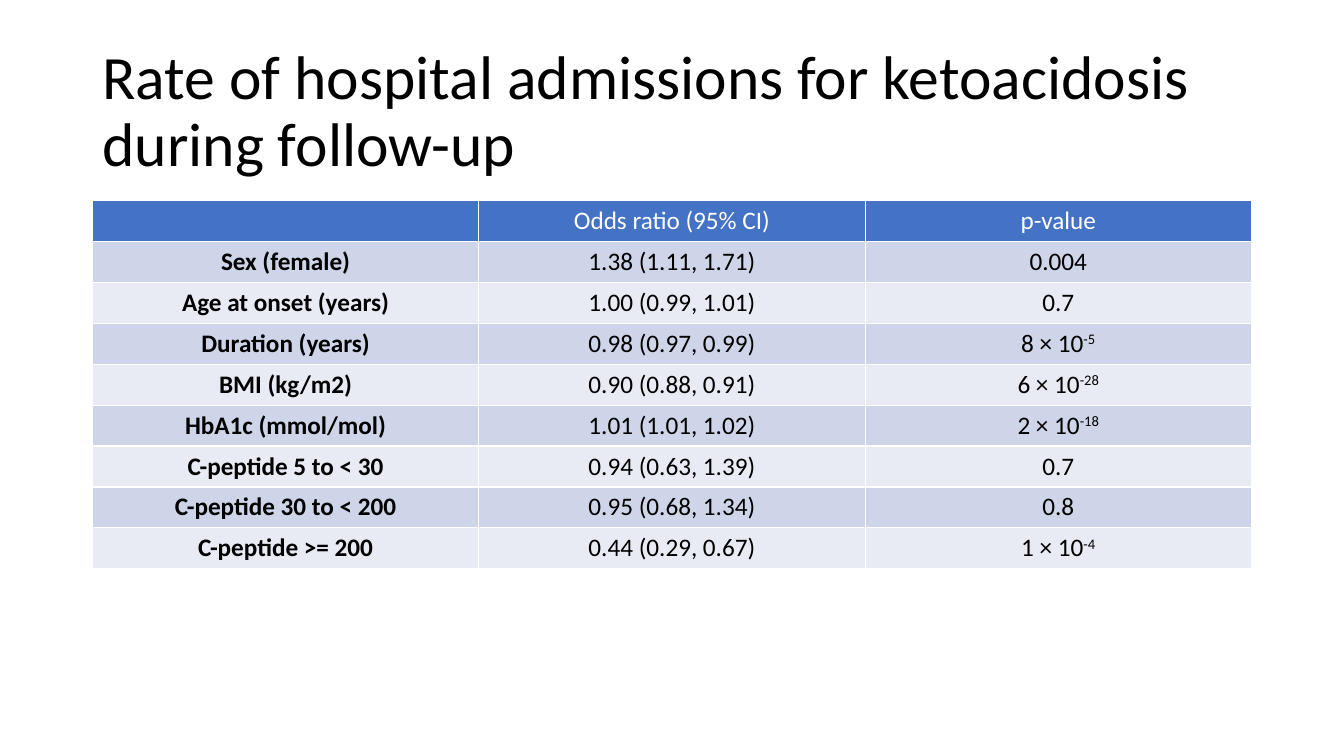
"""Build a slide with a table of odds ratios for ketoacidosis admissions."""
import dataclasses

import lxml.etree
import pptx
import pptx.dml.color
import pptx.enum.text
import pptx.oxml.ns
import pptx.util

Cm = pptx.util.Cm
Pt = pptx.util.Pt
PP_ALIGN = pptx.enum.text.PP_ALIGN


@dataclasses.dataclass(frozen=True)
class Theme:
    font: str = "Calibri"
    title_size: int = 44
    table_size: int = 18
    border_width: float = 0.96
    text: str = "000000"
    white: str = "FFFFFF"
    header: str = "4472C4"
    bands: tuple = ("CFD5E9", "E8EBF4")


HEADINGS = ("", "Odds ratio (95% CI)", "p-value")
RESULTS = (
    ("Sex (female)", "1.38 (1.11, 1.71)", "0.004"),
    ("Age at onset (years)", "1.00 (0.99, 1.01)", "0.7"),
    ("Duration (years)", "0.98 (0.97, 0.99)", ("8 × 10", "-5")),
    ("BMI (kg/m2)", "0.90 (0.88, 0.91)", ("6 × 10", "-28")),
    ("HbA1c (mmol/mol)", "1.01 (1.01, 1.02)", ("2 × 10", "-18")),
    ("C-peptide 5 to < 30", "0.94 (0.63, 1.39)", "0.7"),
    ("C-peptide 30 to < 200", "0.95 (0.68, 1.34)", "0.8"),
    ("C-peptide >= 200", "0.44 (0.29, 0.67)", ("1 × 10", "-4")),
)


class SlideBuilder:
    def __init__(self, prs, theme):
        self.theme = theme
        self.s = prs.slides.add_slide(prs.slide_layouts[5])

    def add_run(self, p, text, size, color, bold=False, superscript=False):
        r = p.add_run()
        r.text = text
        r.font.name = self.theme.font
        r.font.size = Pt(size)
        r.font.bold = bold
        r.font.color.rgb = pptx.dml.color.RGBColor.from_string(color)
        if superscript:
            r.font._element.set("baseline", "30000")

    def add_title(self, text, left, top, width, height):
        sp = self.s.shapes.title
        sp.left, sp.top, sp.width, sp.height = left, top, width, height
        tf = sp.text_frame
        tf.word_wrap = True
        tf.auto_size = pptx.enum.text.MSO_AUTO_SIZE.NONE
        tf.vertical_anchor = pptx.enum.text.MSO_ANCHOR.MIDDLE
        p = tf.paragraphs[0]
        p.alignment = PP_ALIGN.LEFT
        p.line_spacing = 0.9
        self.add_run(p, text, self.theme.title_size, self.theme.text)

    def set_borders(self, cell):
        tc_pr = cell._tc.get_or_add_tcPr()
        qn = pptx.oxml.ns.qn
        for side in ("a:lnL", "a:lnR", "a:lnT", "a:lnB"):
            ln = lxml.etree.SubElement(tc_pr, qn(side), w=str(Pt(self.theme.border_width)))
            fill = lxml.etree.SubElement(ln, qn("a:solidFill"))
            lxml.etree.SubElement(fill, qn("a:srgbClr"), val=self.theme.white)

    def fill_cell(self, cell, content, fill, color, bold):
        self.set_borders(cell)
        cell.fill.solid()
        cell.fill.fore_color.rgb = pptx.dml.color.RGBColor.from_string(fill)
        p = cell.text_frame.paragraphs[0]
        p.alignment = PP_ALIGN.CENTER
        parts = (content,) if isinstance(content, str) else content
        for i, part in enumerate(parts):
            if part:
                self.add_run(p, part, self.theme.table_size, color, bold, i > 0)

    def add_table(self, headings, rows, left, top, width, row_height):
        n_rows = len(rows) + 1
        table = self.s.shapes.add_table(
            n_rows, len(headings), left, top, width, row_height * n_rows
        ).table
        for j, heading in enumerate(headings):
            self.fill_cell(table.cell(0, j), heading, self.theme.header, self.theme.white, False)
        for i, row in enumerate(rows):
            band = self.theme.bands[i % len(self.theme.bands)]
            for j, content in enumerate(row):
                self.fill_cell(table.cell(i + 1, j), content, band, self.theme.text, j == 0)


def main():
    prs = pptx.Presentation()
    prs.slide_width, prs.slide_height = Cm(33.87), Cm(19.05)
    left, width = Cm(2.33), Cm(29.21)
    slide = SlideBuilder(prs, Theme())
    slide.add_title(
        "Rate of hospital admissions for ketoacidosis during follow-up",
        left, Cm(1.01), width, Cm(3.68),
    )
    slide.add_table(HEADINGS, RESULTS, left, Cm(5.06), width, Cm(1.03))
    prs.save("out.pptx")


if __name__ == "__main__":
    main()
